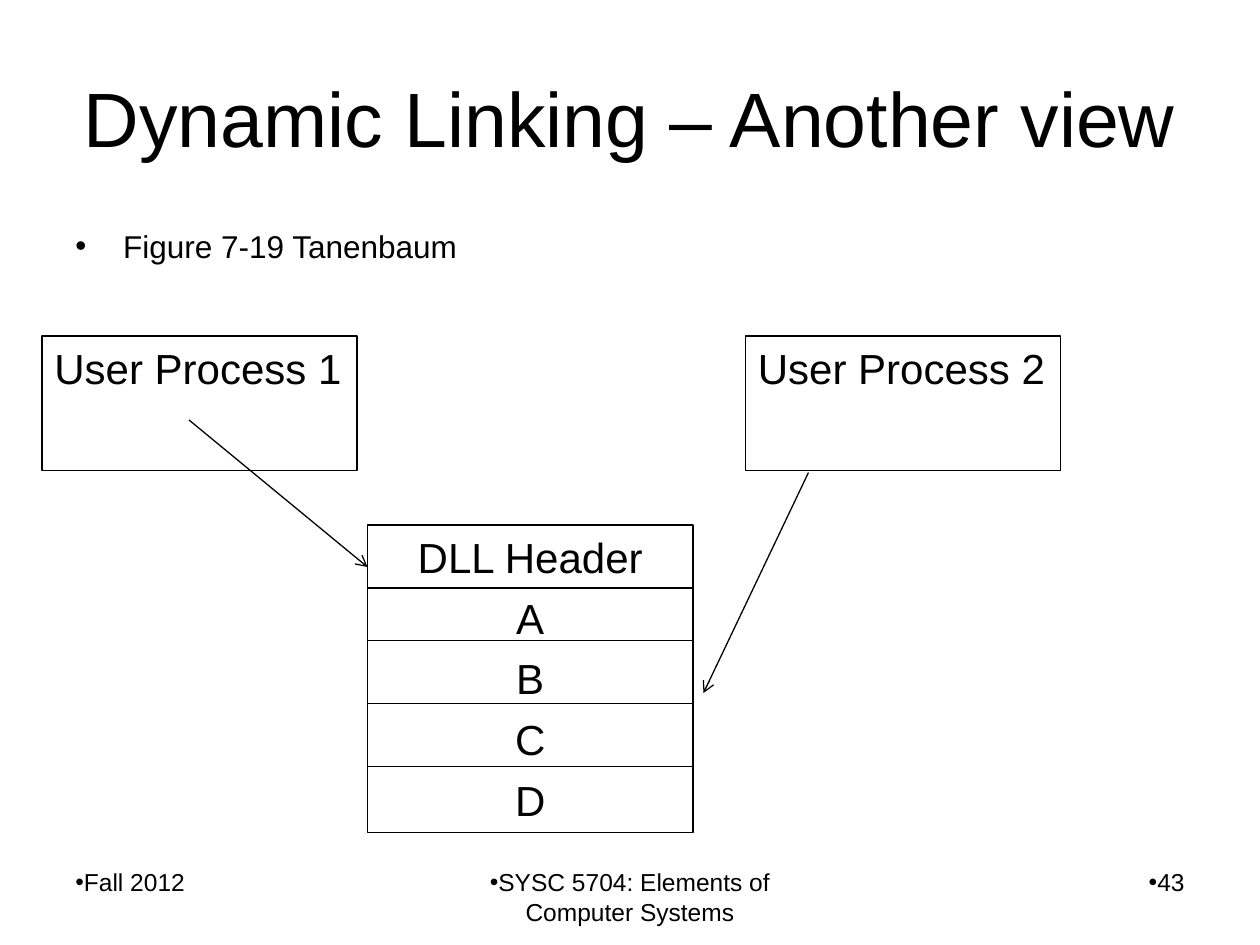
from lxml import etree
from pptx import Presentation
from pptx.dml.color import RGBColor
from pptx.enum.shapes import MSO_CONNECTOR, MSO_SHAPE
from pptx.enum.text import MSO_ANCHOR, PP_ALIGN
from pptx.oxml.ns import qn
from pptx.util import Inches, Pt

BLACK = RGBColor(0, 0, 0)
LEFT, CENTER, RIGHT = PP_ALIGN.LEFT, PP_ALIGN.CENTER, PP_ALIGN.RIGHT
TOP, MIDDLE = MSO_ANCHOR.TOP, MSO_ANCHOR.MIDDLE
RECT, STRAIGHT = MSO_SHAPE.RECTANGLE, MSO_CONNECTOR.STRAIGHT


def u(n):
    """Grid units, twelve to the inch: the slide is 120 by 90."""
    return Inches(n / 12)


class Diagram:
    font = "Arial"
    line_width = Pt(0.75)

    def __init__(self, slide):
        self.shapes = slide.shapes

    def set_text(self, sp, lines, size, align, anchor=TOP, before=0):
        tf = sp.text_frame
        tf.word_wrap = True
        tf.vertical_anchor = anchor
        tf.text = "\n".join(lines)
        for p in tf.paragraphs:
            p.alignment = align
            p.space_before = Pt(before)
            for r in p.runs:
                r.font.name = self.font
                r.font.size = Pt(size)
                r.font.color.rgb = BLACK

    def text(self, x, y, w, h, text, size, align=LEFT, anchor=TOP, before=0):
        sp = self.shapes.add_textbox(u(x), u(y), u(w), u(h))
        self.set_text(sp, [text], size, align, anchor, before)
        return sp

    def bullet(self, sp, indent=0):
        for p in sp.text_frame.paragraphs:
            ppr = p._p.get_or_add_pPr()
            ppr.set("marL", str(Inches(indent)))
            ppr.set("indent", str(-Inches(indent)))
            etree.SubElement(ppr, qn("a:buFont")).set("typeface", self.font)
            etree.SubElement(ppr, qn("a:buChar")).set("char", "•")

    def box(self, x, y, w, h, lines, align=LEFT):
        sp = self.shapes.add_shape(RECT, u(x), u(y), u(w), u(h))
        sp.shadow.inherit = False
        sp.fill.background()
        sp.line.color.rgb = BLACK
        sp.line.width = self.line_width
        self.set_text(sp, lines, 24, align, before=6)

    def line(self, x1, y1, x2, y2, arrow=False):
        c = self.shapes.add_connector(STRAIGHT, u(x1), u(y1), u(x2), u(y2))
        c.line.color.rgb = BLACK
        c.line.width = self.line_width
        etree.SubElement(c._element.spPr, qn("a:effectLst"))
        if arrow:
            ln = c._element.spPr.find(qn("a:ln"))
            etree.SubElement(ln, qn("a:tailEnd")).set("type", "arrow")


def main():
    prs = Presentation()
    prs.slide_width, prs.slide_height = Inches(10), Inches(7.5)
    s = prs.slides.add_slide(prs.slide_layouts[6])
    d = Diagram(s)

    # Title and source of the figure
    d.text(6, 3.6, 108, 15, "Dynamic Linking – Another view", 44, CENTER, MIDDLE)
    d.bullet(d.text(6, 21, 108, 59.4, "Figure 7-19 Tanenbaum", 18, before=4), 0.38)

    # Footer
    for x, w, text, align in (
        (6, 28, "Fall 2012", LEFT),
        (41, 38, "SYSC 5704: Elements of Computer Systems", CENTER),
        (86, 28, "43", RIGHT),
    ):
        d.bullet(d.text(x, 82, w, 6.25, text, 14, align))

    # User processes
    for x, name in ((4, "User Process 1"), (71, "User Process 2")):
        d.box(x, 32, 30, 12.8, [name])

    # Linked library and its dividers
    left, right = 35, 66
    d.box(left, 50, right - left, 29.3, ["DLL Header", "A", "B", "C", "D"], CENTER)
    for y in (56, 61, 67, 73):
        d.line(left, y, right, y)

    # Links from the processes to the library
    d.line(18, 40, left, 54, arrow=True)
    d.line(77, 45, 67, 66, arrow=True)

    prs.save("out.pptx")


if __name__ == "__main__":
    main()
